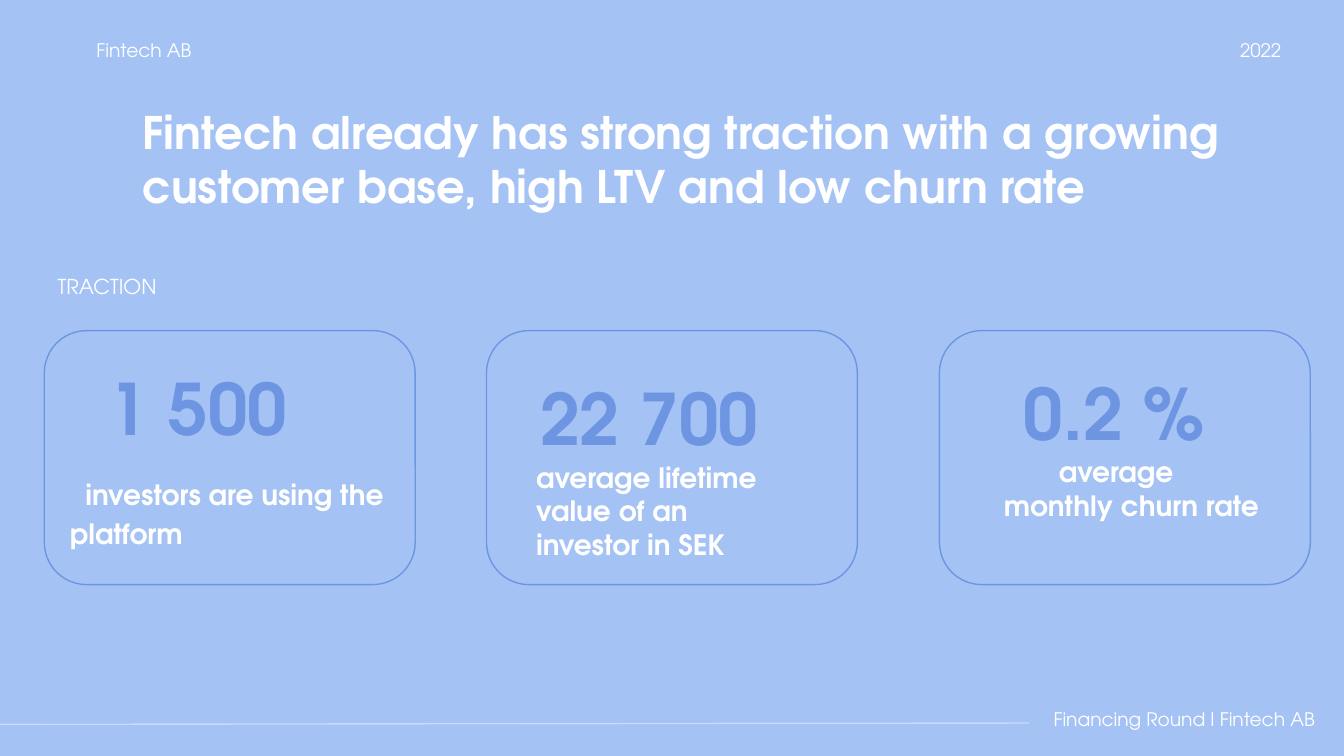
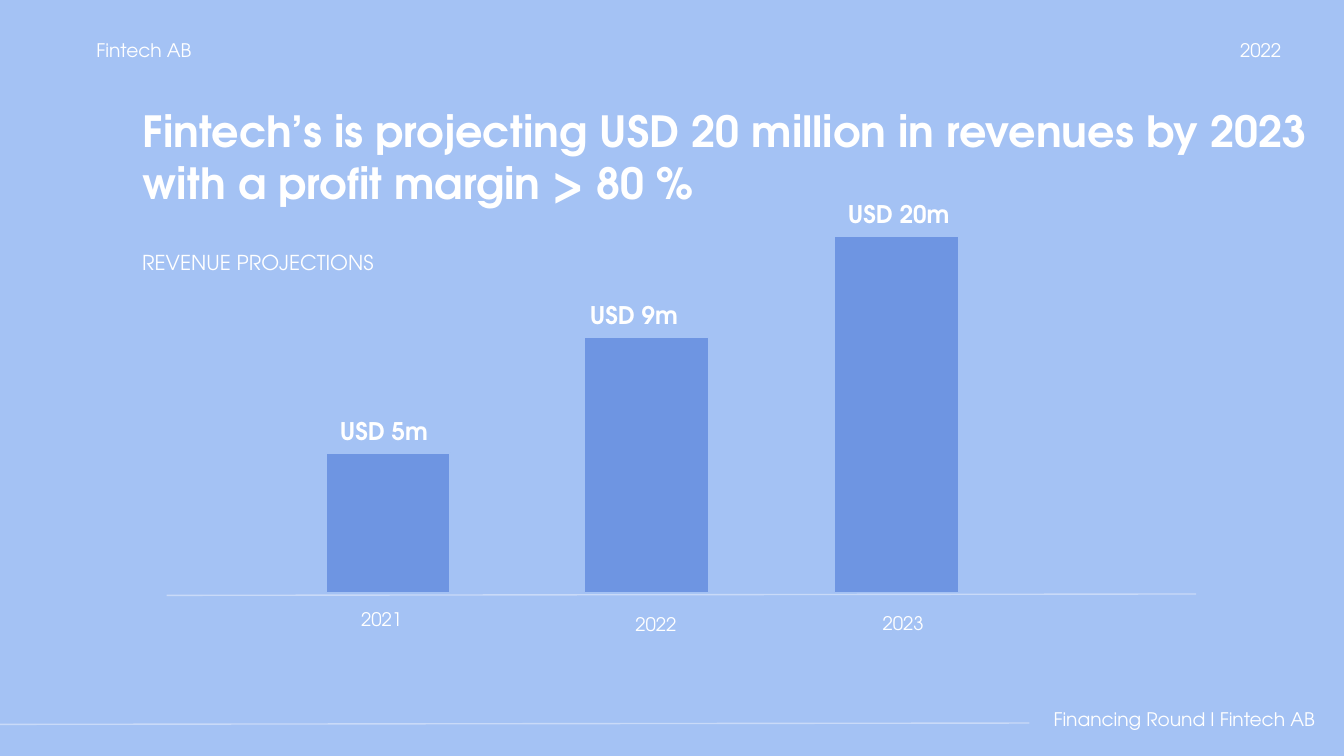
from dataclasses import dataclass
from typing import NamedTuple

from lxml import etree
from pptx import Presentation
from pptx.dml.color import RGBColor
from pptx.enum.shapes import MSO_CONNECTOR, MSO_SHAPE
from pptx.enum.text import MSO_ANCHOR, MSO_AUTO_SIZE, PP_ALIGN
from pptx.oxml.ns import qn
from pptx.util import Inches, Pt

ROUNDED, RECTANGLE = MSO_SHAPE.ROUNDED_RECTANGLE, MSO_SHAPE.RECTANGLE
STRAIGHT = MSO_CONNECTOR.STRAIGHT
TOP, MIDDLE = MSO_ANCHOR.TOP, MSO_ANCHOR.MIDDLE
LEFT, CENTER = PP_ALIGN.LEFT, PP_ALIGN.CENTER
NO_AUTOFIT = MSO_AUTO_SIZE.NONE

FONT = "TeX Gyre Adventor"
SKY = RGBColor(0xA4, 0xC2, 0xF4)
BLUE = RGBColor(0x6E, 0x95, 0xE2)
PALE = RGBColor(0xC9, 0xDA, 0xF8)
WHITE = RGBColor(0xFF, 0xFF, 0xFF)

SLIDE_WIDTH = Inches(10)
SLIDE_HEIGHT = SLIDE_WIDTH * 9 // 16
TITLE_ONLY = 5
CELL = SLIDE_WIDTH / 100  # square grid: 100 columns across the slide
INSET = 1
LABEL_WIDTH, LABEL_HEIGHT = 32.8, 4.4


class Box(NamedTuple):
    """Left, top, width and height in grid cells."""
    left: float
    top: float
    width: float = LABEL_WIDTH
    height: float = LABEL_HEIGHT


@dataclass(frozen=True)
class Line:
    """One paragraph; indents are in grid cells and spacing in points."""
    text: str
    size: float
    bold: bool = False
    color: RGBColor = WHITE
    align: PP_ALIGN = LEFT
    margin: float = 0
    first_indent: float = 0
    before: float = 0
    spacing: float = 1.0


@dataclass(frozen=True)
class Metric:
    card_left: float
    lines: tuple[Line, ...]
    text_box: Box | None = None  # None puts the text in the card itself


@dataclass(frozen=True)
class Revenue:
    year: str
    year_left: float
    year_top: float
    amount: str
    amount_left: float
    bar_left: float
    bar_height: float


CARD_TOP, CARD_WIDTH, CARD_HEIGHT = 24.6, 27.6, 18.9
BAR_WIDTH, BAR_FOOT = 9.2, 44.1
AMOUNT_RISE = 3.75


def figure(text: str, margin: float) -> Line:
    return Line(text, 38, True, BLUE, margin=margin)


def caption(text: str, margin: float = 0) -> Line:
    return Line(text, 15, True, margin=margin)


METRICS = (
    Metric(3.3, (figure("1 500", 2.9),
                 Line("investors are using the platform", 15, True,
                      first_indent=1.15, before=12, spacing=1.17))),
    Metric(36.2, (figure("22 700", 1.5), caption("average lifetime", 1.2),
                  caption("value of an", 1.2), caption("investor in SEK", 1.2)),
           Box(37.7, 26.9, height=16)),
    Metric(69.9, (figure("0.2 %", 1.5), caption("average", 4.1),
                  caption("monthly churn rate")),
           Box(73.7, 26.5, height=14.4)),
)

REVENUES = (
    Revenue("2021", 12, 44.2, "USD 5m", 24.3, 24.3, 10.4),
    Revenue("2022", 32.4, 44.6, "USD 9m", 42.9, 43.5, 19),
    Revenue("2023", 50.8, 44.5, "USD 20m", 62.1, 62.1, 26.5),
)


def cells(count: float) -> int:
    return round(count * CELL)


def write(frame, lines, anchor=TOP) -> None:
    inset = cells(INSET)
    frame_format = {
        "auto_size": NO_AUTOFIT, "word_wrap": True, "vertical_anchor": anchor,
        "margin_left": inset, "margin_top": inset,
        "margin_right": inset, "margin_bottom": inset,
    }
    for name, value in frame_format.items():
        setattr(frame, name, value)
    for index, line in enumerate(lines):
        paragraph = frame.add_paragraph() if index else frame.paragraphs[0]
        paragraph_format = {
            "alignment": line.align, "space_before": Pt(line.before),
            "line_spacing": line.spacing,
        }
        for name, value in paragraph_format.items():
            setattr(paragraph, name, value)
        properties = paragraph._p.get_or_add_pPr()
        properties.set("marL", str(cells(line.margin)))
        properties.set("indent", str(cells(line.first_indent)))
        run = paragraph.add_run()
        run.text = line.text
        run_format = {"name": FONT, "size": Pt(line.size), "bold": line.bold}
        for name, value in run_format.items():
            setattr(run.font, name, value)
        run.font.color.rgb = line.color


def add_text(slide, box: Box, *lines: Line) -> None:
    text_box = slide.shapes.add_textbox(*map(cells, box))
    write(text_box.text_frame, lines)


def add_block(slide, kind, box: Box, fill: RGBColor, outline: RGBColor):
    block = slide.shapes.add_shape(kind, *map(cells, box))
    block.shadow.inherit = False
    block.fill.solid()
    block.fill.fore_color.rgb = fill
    block.line.color.rgb = outline
    block.line.width = Pt(0.75)
    return block


def add_rule(slide, *ends: float) -> None:
    """Draw a thin pale line; ends are x1, y1, x2, y2."""
    rule = slide.shapes.add_connector(STRAIGHT, *map(cells, ends))
    rule.line.color.rgb = PALE
    rule.line.width = Pt(0.75)
    etree.SubElement(rule._element.spPr, qn("a:effectLst"))


def add_framed_slide(prs, title: str, title_size: float, title_height: float):
    """Add a slide with the shared header, footer and title."""
    slide = prs.slides.add_slide(prs.slide_layouts[TITLE_ONLY])
    heading = slide.shapes.title
    title_box = Box(9.6, 6.8, 91.5, title_height)
    for name, value in title_box._asdict().items():
        setattr(heading, name, cells(value))
    write(heading.text_frame, [Line(title, title_size, True)])
    add_text(slide, Box(-5.7, 1.9), Line("Fintech AB", 10, align=CENTER))
    add_text(slide, Box(77.4, 1.9), Line("2022", 10, align=CENTER))
    add_rule(slide, 0, 53.9, 76.6, 53.8)
    add_text(slide, Box(77.4, 51.7), Line("Financing Round I Fintech AB", 10))
    return slide


def add_traction(prs) -> None:
    slide = add_framed_slide(
        prs, "Fintech already has strong traction with a growing "
             "customer base, high LTV and low churn rate", 24, 10.2)
    add_text(slide, Box(3.3, 19.4), Line("TRACTION", 11))
    for metric in METRICS:
        card_box = Box(metric.card_left, CARD_TOP, CARD_WIDTH, CARD_HEIGHT)
        card = add_block(slide, ROUNDED, card_box, SKY, BLUE)
        if metric.text_box:
            add_text(slide, metric.text_box, *metric.lines)
        else:
            write(card.text_frame, metric.lines, MIDDLE)


def add_projections(prs) -> None:
    slide = add_framed_slide(
        prs, "Fintech’s is projecting USD 20 million in revenues by 2023 "
             "with a profit margin > 80 %", 23, 10.8)
    add_text(slide, Box(9.6, 17.6), Line("REVENUE PROJECTIONS", 11))
    for revenue in REVENUES:
        bar_top = BAR_FOOT - revenue.bar_height
        bar = Box(revenue.bar_left, bar_top, BAR_WIDTH, revenue.bar_height)
        add_block(slide, RECTANGLE, bar, BLUE, SKY)
        add_text(slide, Box(revenue.year_left, revenue.year_top),
                 Line(revenue.year, 10, align=CENTER))
        add_text(slide, Box(revenue.amount_left, bar_top - AMOUNT_RISE),
                 Line(revenue.amount, 13, True))
    add_rule(slide, 12.4, 44.3, 89, 44.2)


def main() -> None:
    prs = Presentation()
    prs.slide_width, prs.slide_height = SLIDE_WIDTH, SLIDE_HEIGHT
    background = prs.slide_master.background.fill
    background.solid()
    background.fore_color.rgb = SKY
    add_traction(prs)
    add_projections(prs)
    prs.save("out.pptx")


if __name__ == "__main__":
    main()
